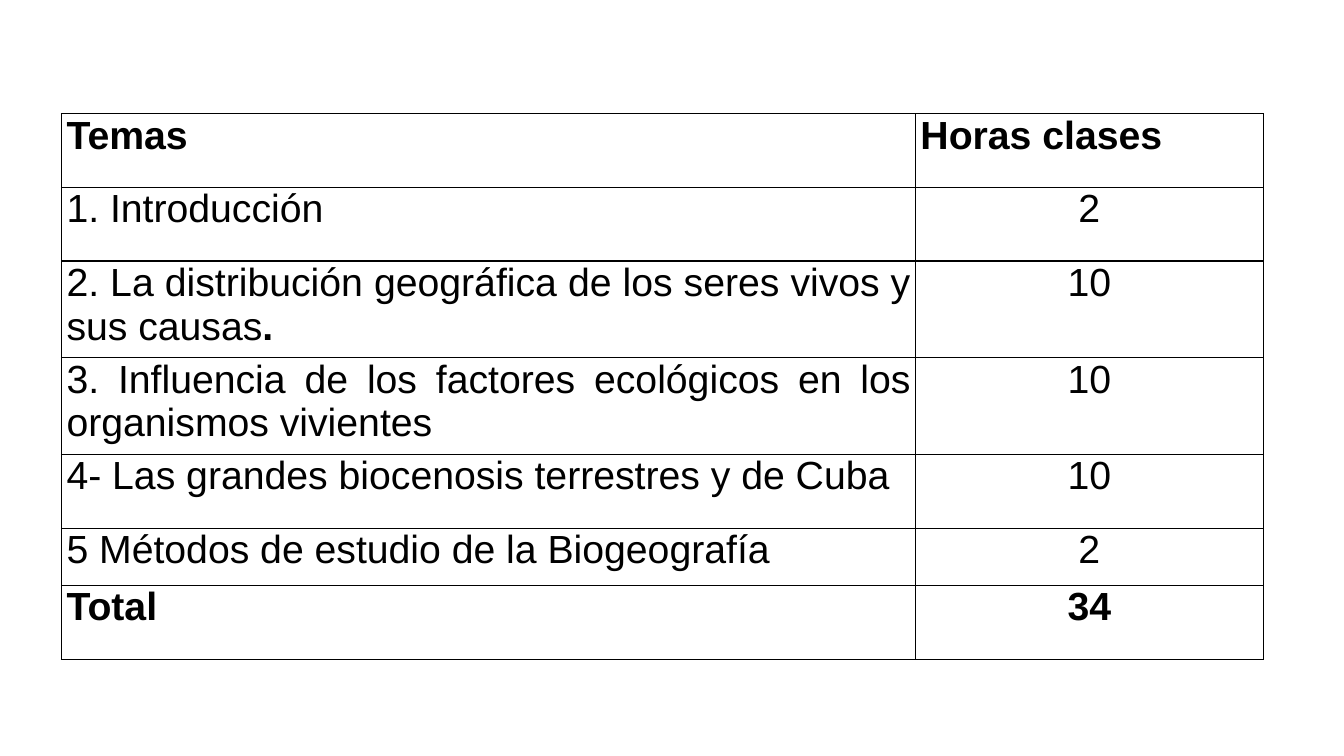
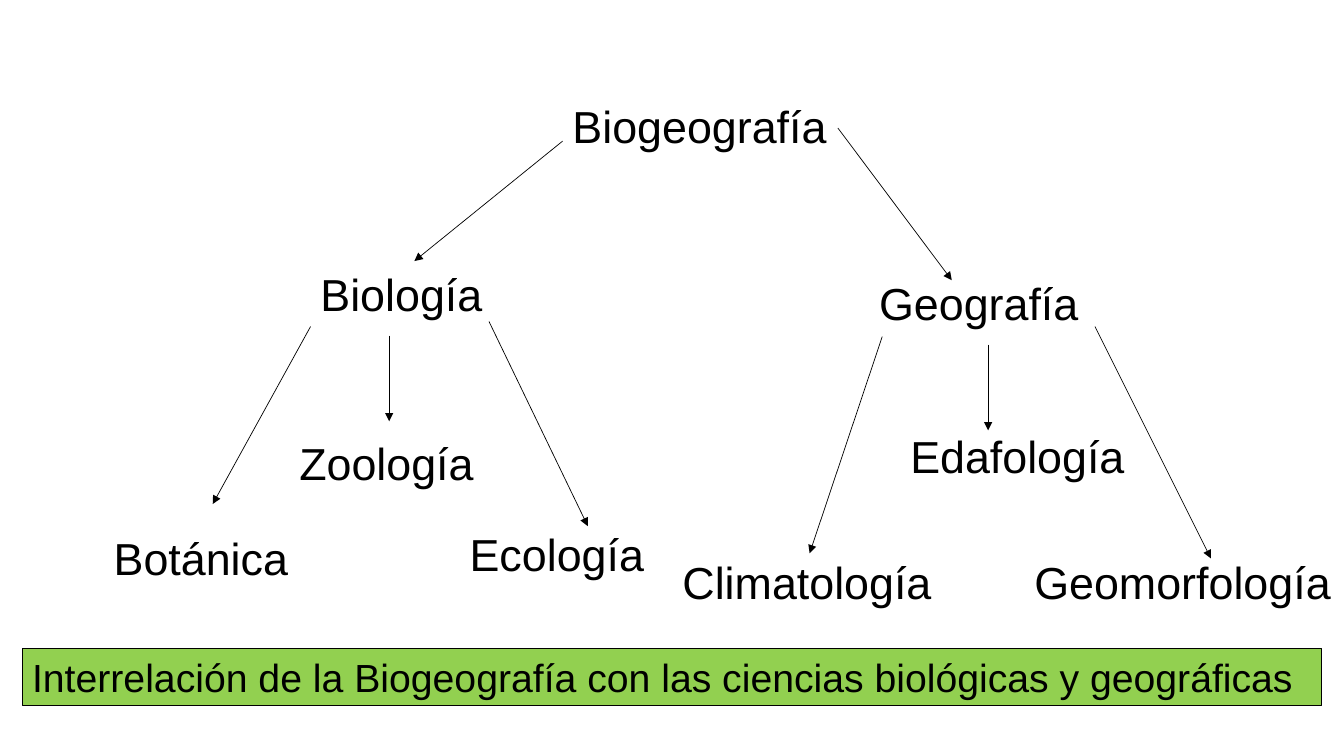
from lxml import etree
from pptx import Presentation
from pptx.dml.color import RGBColor
from pptx.enum.shapes import MSO_CONNECTOR, MSO_SHAPE
from pptx.enum.text import MSO_ANCHOR, PP_ALIGN
from pptx.oxml.ns import qn
from pptx.util import Emu, Pt

STRAIGHT = MSO_CONNECTOR.STRAIGHT
RECTANGLE = MSO_SHAPE.RECTANGLE
TOP, MIDDLE = MSO_ANCHOR.TOP, MSO_ANCHOR.MIDDLE
LEFT, CENTER, JUSTIFY = PP_ALIGN.LEFT, PP_ALIGN.CENTER, PP_ALIGN.JUSTIFY

FONT = "Arial"
BLACK, GREEN = "000000", "92D050"
BODY_SIZE, LABEL_SIZE = 28, 32
LABEL_H = 64

# Syllabus: topic, hours
HEADER = ("Temas", "Horas clases")
TOPICS = [
    ("1. Introducción", "2"),
    ("2. La distribución geográfica de los seres vivos y sus causas.", "10"),
    ("3. Influencia de los factores ecológicos en los organismos vivientes", "10"),
    ("4- Las grandes biocenosis terrestres y de Cuba", "10"),
    ("5 Métodos de estudio de la Biogeografía", "2"),
]
TOTAL = ("Total", "34")
COL_WIDTHS = (847, 345)
ROW_HEIGHTS = (73, 73, 96, 96, 73, 57, 73)

# Branches, relative to their own corner: label box (x, y, w) and arrow ends
BIOLOGY = [
    ("Biología", (205, 0, 456), None),
    ("Botánica", (0, 262, 206), (205, 64, 108, 240)),
    ("Zoología", (184, 167, 206), (283, 73, 283, 158)),
    ("Ecología", (353, 258, 206), (382, 59, 480, 262)),
]
GEOGRAPHY = [
    ("Geografía", (195, 0, 219), None),
    ("Climatología", (0, 276, 278), (208, 65, 136, 280)),
    ("Edafología", (226, 151, 257), (313, 73, 313, 158)),
    ("Geomorfología", (349, 276, 317), (419, 55, 534, 285)),
]


def px(n):
    """One px is a hundredth of an inch."""
    return Emu(n * 9144)


def rgb(color):
    return RGBColor.from_string(color)


def write(tf, text, size, align=LEFT, bold=False):
    p = tf.paragraphs[0]
    p.text = text
    p.alignment = align
    for r in p.runs:
        r.font.name, r.font.size, r.font.bold = FONT, Pt(size), bold
        r.font.color.rgb = rgb(BLACK)
    return p


def add_label(slide, text, x, y, w, h=LABEL_H, anchor=TOP):
    sp = slide.shapes.add_textbox(px(x), px(y), px(w), px(h))
    tf = sp.text_frame
    tf.word_wrap = True
    tf.margin_right = 0
    tf.vertical_anchor = anchor
    return write(tf, text, LABEL_SIZE)


def add_arrow(slide, x1, y1, x2, y2):
    line = slide.shapes.add_connector(STRAIGHT, px(x1), px(y1), px(x2), px(y2))
    line.line.color.rgb = rgb(BLACK)
    line.line.width = Pt(0.5)
    etree.SubElement(line.line._get_or_add_ln(), qn("a:tailEnd"), type="triangle")
    etree.SubElement(line._element.spPr, qn("a:effectLst"))


def add_borders(cell):
    tc_pr = cell._tc.get_or_add_tcPr()
    for side in ("a:lnL", "a:lnR", "a:lnT", "a:lnB"):
        ln = etree.SubElement(tc_pr, qn(side), w=str(Pt(1)))
        fill = etree.SubElement(ln, qn("a:solidFill"))
        etree.SubElement(fill, qn("a:srgbClr"), val=BLACK)


def add_syllabus(slide, x, y):
    rows = [HEADER, *TOPICS, TOTAL]
    table = slide.shapes.add_table(
        len(rows), len(COL_WIDTHS), px(x), px(y),
        px(sum(COL_WIDTHS)), px(sum(ROW_HEIGHTS))).table
    table.first_row = table.horz_banding = False
    for col, w in zip(table.columns, COL_WIDTHS):
        col.width = px(w)
    for row, h, texts in zip(table.rows, ROW_HEIGHTS, rows):
        row.height = px(h)
        strong = texts in (HEADER, TOTAL)
        for i, (cell, text) in enumerate(zip(row.cells, texts)):
            cell.margin_left = cell.margin_right = px(5)
            cell.margin_top = cell.margin_bottom = 0
            add_borders(cell)
            cell.fill.background()
            align = CENTER if i and texts != HEADER else JUSTIFY
            p = write(cell.text_frame, text, BODY_SIZE, align, strong)
            # The full stop that closes a topic is bold
            if text.endswith("."):
                p.runs[0].text = text[:-1]
                r = p.add_run()
                r.text = "."
                r.font.name, r.font.size, r.font.bold = FONT, Pt(BODY_SIZE), True
                r.font.color.rgb = rgb(BLACK)


def add_branch(slide, x, y, parts):
    for text, (dx, dy, w), arrow in parts:
        if arrow:
            x1, y1, x2, y2 = arrow
            add_arrow(slide, x + x1, y + y1, x + x2, y + y2)
        add_label(slide, text, x + dx, y + dy, w)


def add_banner(slide, text, x, y, w, h):
    sp = slide.shapes.add_shape(RECTANGLE, px(x), px(y), px(w), px(h))
    sp.shadow.inherit = False
    sp.fill.solid()
    sp.fill.fore_color.rgb = rgb(GREEN)
    sp.line.color.rgb = rgb(BLACK)
    sp.line.width = Pt(0.75)
    tf = sp.text_frame
    tf.word_wrap = True
    tf.vertical_anchor = TOP
    write(tf, text, BODY_SIZE)


def add_science_tree(slide, x, y):
    # Root and its two arrows
    p = add_label(slide, "Biogeografía", x + 455, y, 300, 145, MIDDLE)
    p.line_spacing = 0.9
    add_arrow(slide, x + 455, y + 85, x + 308, y + 204)
    add_arrow(slide, x + 728, y + 72, x + 841, y + 223)
    # Branches
    add_branch(slide, x, y + 205, BIOLOGY)
    add_branch(slide, x + 564, y + 214, GEOGRAPHY)


def main():
    prs = Presentation()
    prs.slide_width, prs.slide_height = px(1333), px(750)
    blank = prs.slide_layouts[6]

    add_syllabus(prs.slides.add_slide(blank), 61, 113)

    slide = prs.slides.add_slide(blank)
    add_science_tree(slide, 103, 55)
    add_banner(
        slide,
        "Interrelación de la Biogeografía con las ciencias biológicas y geográficas",
        22, 643, 1289, 57)

    prs.save("out.pptx")


if __name__ == "__main__":
    main()
